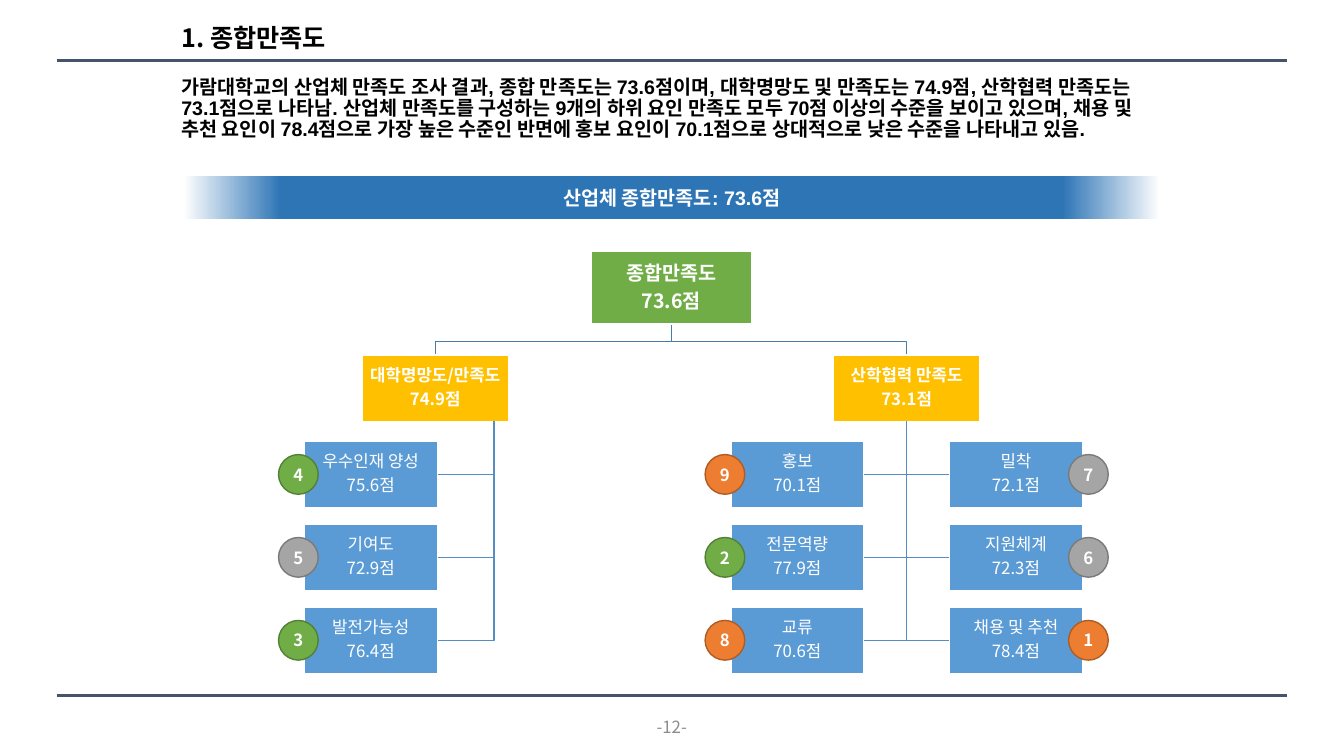
from typing import NamedTuple

from lxml import etree
from pptx import Presentation
from pptx.dml.color import RGBColor
from pptx.enum.shapes import MSO_CONNECTOR, MSO_SHAPE
from pptx.enum.text import MSO_ANCHOR, PP_ALIGN
from pptx.oxml.ns import qn
from pptx.util import Cm, Pt

RECTANGLE, OVAL = MSO_SHAPE.RECTANGLE, MSO_SHAPE.OVAL
STRAIGHT = MSO_CONNECTOR.STRAIGHT
LEFT, CENTER = PP_ALIGN.LEFT, PP_ALIGN.CENTER
TOP, MIDDLE = MSO_ANCHOR.TOP, MSO_ANCHOR.MIDDLE

KOREAN_FONT = "Noto Sans CJK KR"
LATIN_FONT = "Arial"

BLACK = RGBColor(0x00, 0x00, 0x00)
WHITE = RGBColor(0xFF, 0xFF, 0xFF)
PAGE_GRAY = RGBColor(0x8C, 0x8C, 0x8C)
RULE_NAVY = RGBColor(0x44, 0x54, 0x6A)
BANNER_BLUE = RGBColor(0x2E, 0x75, 0xB6)
LEAF_BLUE = RGBColor(0x5B, 0x9B, 0xD5)
BRANCH_YELLOW = RGBColor(0xFF, 0xC0, 0x00)
ROOT_LINE = RGBColor(0x49, 0x7C, 0xAB)
LEAF_LINE = RGBColor(0x53, 0x8D, 0xC1)
GREEN = RGBColor(0x70, 0xAD, 0x47)
GREEN_EDGE = RGBColor(0x53, 0x80, 0x35)
GRAY = RGBColor(0xA5, 0xA5, 0xA5)
GRAY_EDGE = RGBColor(0x7A, 0x7A, 0x7A)
ORANGE = RGBColor(0xED, 0x7D, 0x31)
ORANGE_EDGE = RGBColor(0xAF, 0x5C, 0x24)

RANK_COLORS = {
    **dict.fromkeys((2, 3, 4), (GREEN, GREEN_EDGE)),
    **dict.fromkeys((5, 6, 7), (GRAY, GRAY_EDGE)),
    **dict.fromkeys((1, 8, 9), (ORANGE, ORANGE_EDGE)),
}

SUMMARY = (
    "가람대학교의 산업체 만족도 조사 결과, 종합 만족도는 73.6점이며, "
    "대학명망도 및 만족도는 74.9점, 산학협력 만족도는 73.1점으로 나타남. "
    "산업체 만족도를 구성하는 9개의 하위 요인 만족도 모두 70점 이상의 수준을 "
    "보이고 있으며, 채용 및 추천 요인이 78.4점으로 가장 높은 수준인 반면에 "
    "홍보 요인이 70.1점으로 상대적으로 낮은 수준을 나타내고 있음."
)

# Leaf columns: rows of (label, score, rank)
REPUTATION = [("우수인재 양성", "75.6점", 4), ("기여도", "72.9점", 5),
              ("발전가능성", "76.4점", 3)]
COOPERATION_LEFT = [("홍보", "70.1점", 9), ("전문역량", "77.9점", 2),
                    ("교류", "70.6점", 8)]
COOPERATION_RIGHT = [("밀착", "72.1점", 7), ("지원체계", "72.3점", 6),
                     ("채용 및 추천", "78.4점", 1)]

# Chart measures in centimetres
LEAF_WIDTH, LEAF_HEIGHT, ROW_PITCH = 3.35, 1.67, 2.09
BADGE_SIZE, BADGE_OFFSET = 1.0, 0.15


class Box(NamedTuple):
    left: float
    top: float
    width: float
    height: float

    @property
    def right(self):
        return self.left + self.width

    @property
    def bottom(self):
        return self.top + self.height

    @property
    def center(self):
        return self.left + self.width / 2

    @property
    def middle(self):
        return self.top + self.height / 2

    def lengths(self):
        return [Cm(value) for value in self]


def write_text(shape, lines, size, color, bold=False, font=KOREAN_FONT,
               align=CENTER, anchor=MIDDLE, inset=None, spacing=None):
    frame = shape.text_frame
    frame.word_wrap = True
    frame.vertical_anchor = anchor
    if inset is not None:
        frame.margin_left = frame.margin_right = Cm(inset)
        frame.margin_top = frame.margin_bottom = Cm(inset)
    for index, line in enumerate(lines):
        paragraph = frame.add_paragraph() if index else frame.paragraphs[0]
        paragraph.alignment = align
        if spacing:
            paragraph.line_spacing = spacing
        run = paragraph.add_run()
        run.text = line
        run.font.size, run.font.bold, run.font.name = Pt(size), bold, font
        run.font.color.rgb = color
        east_asian = etree.SubElement(run.font._element, qn("a:ea"))
        east_asian.set("typeface", KOREAN_FONT)
    return frame


def add_text(slide, box, lines, size, color, **options):
    shape = slide.shapes.add_textbox(*box.lengths())
    return write_text(shape, lines, size, color, **options)


def add_block(slide, kind, box, fill, edge):
    shape = slide.shapes.add_shape(kind, *box.lengths())
    shape.shadow.inherit = False
    shape.fill.solid()
    shape.fill.fore_color.rgb = fill
    shape.line.color.rgb = edge
    shape.line.width = Pt(1)
    return shape


def add_node(slide, box, lines, size, fill, bold):
    shape = add_block(slide, RECTANGLE, box, fill, WHITE)
    frame = write_text(shape, lines, size, WHITE, bold, inset=0.03, spacing=0.9)
    # Paragraph gap as a share of the line
    for paragraph in frame.paragraphs:
        paragraph.space_after = Pt(0)
        gap = paragraph._p.pPr.find(qn("a:spcAft"))
        gap.clear()
        etree.SubElement(gap, qn("a:spcPct")).set("val", "35000")


def add_path(slide, points, color):
    start, *rest = [(Cm(x), Cm(y)) for x, y in points]
    builder = slide.shapes.build_freeform(*start)
    builder.add_line_segments(rest, close=False)
    shape = builder.convert_to_shape()
    shape.shadow.inherit = False
    shape.fill.background()
    shape.line.color.rgb = color
    shape.line.width = Pt(1)


def add_frame(slide, box):
    """Rules at the top and bottom of the box, page number below."""
    for y in (box.top, box.bottom):
        rule = slide.shapes.add_connector(
            STRAIGHT, Cm(box.left), Cm(y), Cm(box.right), Cm(y))
        rule.line.color.rgb = RULE_NAVY
        rule.line.width = Pt(2)
        etree.SubElement(rule._element.spPr, qn("a:effectLst"))
    page_box = Box(box.center - 1, box.bottom + 0.41, 2, 0.77)
    add_text(slide, page_box, ["-12-"], 12, PAGE_GRAY)


def add_heading(slide, box):
    """Title above the summary paragraph."""
    title_box = Box(box.left, box.top, 8, 0.94)
    add_text(slide, title_box, ["1. 종합만족도"], 18, BLACK, bold=True,
             align=LEFT, spacing=0.9)
    summary_box = Box(box.left, box.top + 1.3, box.width, box.height - 1.3)
    add_text(slide, summary_box, [SUMMARY], 14, BLACK, bold=True,
             font=LATIN_FONT, align=LEFT, anchor=TOP, spacing=0.9)


def add_banner(slide, box):
    banner = add_block(slide, RECTANGLE, box, BANNER_BLUE, WHITE)
    banner.line.fill.background()
    banner.fill.gradient()
    banner.fill.gradient_angle = 0
    stop_list = banner._element.spPr.find(qn("a:gradFill")).find(qn("a:gsLst"))
    stop_list.clear()
    for percent, color in ((0, WHITE), (10, BANNER_BLUE),
                           (90, BANNER_BLUE), (100, WHITE)):
        stop = etree.SubElement(stop_list, qn("a:gs"), pos=str(percent * 1000))
        etree.SubElement(stop, qn("a:srgbClr"), val=str(color))
    write_text(banner, ["산업체 종합만족도: 73.6점"], 14, WHITE, bold=True,
               font=LATIN_FONT)


def add_leaves(slide, left, top, trunk, trunk_top, leaves):
    """A column of leaves joined to a trunk, ranks on the far side."""
    for row, (label, score, rank) in enumerate(leaves):
        box = Box(left, top + row * ROW_PITCH, LEAF_WIDTH, LEAF_HEIGHT)
        if left < trunk:
            near, badge_center = box.right, box.left - BADGE_OFFSET
        else:
            near, badge_center = box.left, box.right + BADGE_OFFSET
        add_path(slide, [(trunk, trunk_top), (trunk, box.middle),
                         (near, box.middle)], LEAF_LINE)
        add_node(slide, box, [label, score], 12, LEAF_BLUE, False)
        badge_box = Box(badge_center - BADGE_SIZE / 2,
                        box.middle - BADGE_SIZE / 2, BADGE_SIZE, BADGE_SIZE)
        badge = add_block(slide, OVAL, badge_box, *RANK_COLORS[rank])
        write_text(badge, [str(rank)], 12, WHITE, bold=True, inset=0)


def add_tree(slide, box):
    """Overall score, its two branches and their leaves."""
    root = Box(box.center - 2.03, box.top, 4.06, 1.84)
    reputation = Box(box.left + 1.45, box.top + 2.62, 3.7, 1.67)
    cooperation = reputation._replace(left=box.left + 13.33)
    branches = ((reputation, ["대학명망도/만족도", "74.9점"]),
                (cooperation, ["산학협력 만족도", "73.1점"]))
    for branch, lines in branches:
        bend = root.bottom + 0.43
        add_path(slide, [(root.center, root.bottom), (root.center, bend),
                         (branch.center, bend), (branch.center, branch.top)],
                 ROOT_LINE)
        add_node(slide, branch, lines, 12, BRANCH_YELLOW, True)
    add_node(slide, root, ["종합만족도", "73.6점"], 14, GREEN, True)

    columns = ((0, reputation.right - 0.37, REPUTATION),
               (10.75, cooperation.center, COOPERATION_LEFT),
               (16.26, cooperation.center, COOPERATION_RIGHT))
    for offset, trunk, leaves in columns:
        add_leaves(slide, box.left + offset, box.top + 4.79, trunk,
                   reputation.bottom, leaves)


def main():
    presentation = Presentation()
    presentation.slide_width, presentation.slide_height = Cm(33.87), Cm(19.05)
    slide = presentation.slides.add_slide(presentation.slide_layouts[6])
    add_frame(slide, Box(1.43, 1.52, 31.0, 16.0))
    add_heading(slide, Box(4.32, 0.53, 25.2, 3.71))
    add_banner(slide, Box(4.62, 4.43, 24.62, 1.09))
    add_tree(slide, Box(7.67, 6.33, 18.5, 10.63))
    presentation.save("out.pptx")


if __name__ == "__main__":
    main()
